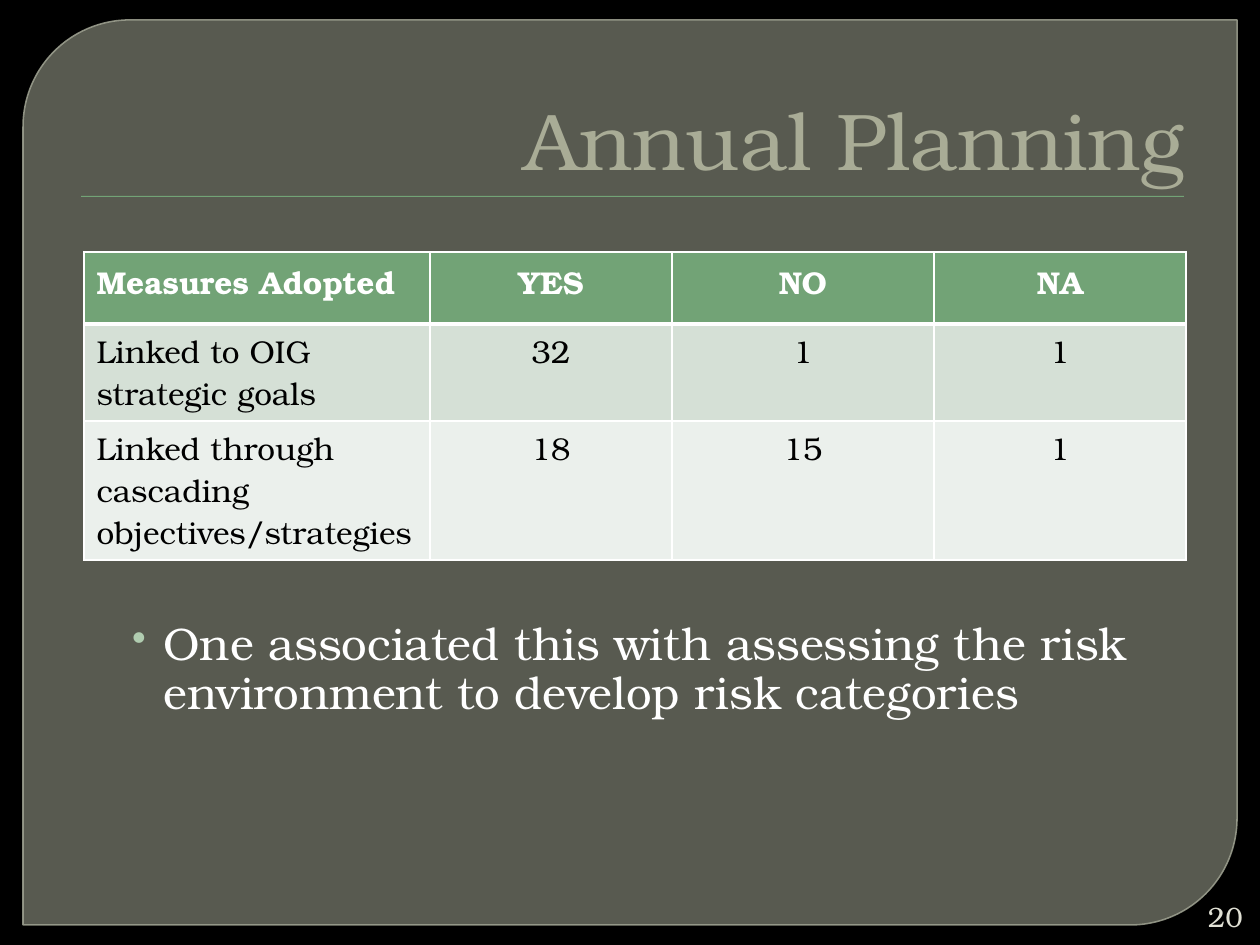
from lxml import etree
from pptx import Presentation
from pptx import util as u
from pptx.dml.color import RGBColor
from pptx.enum import shapes, text
from pptx.oxml.ns import qn

PX = 914400 / 126
FONT = "TeX Gyre Bonum"
LEFT, CENTER, RIGHT = text.PP_ALIGN.LEFT, text.PP_ALIGN.CENTER, text.PP_ALIGN.RIGHT


def rgb(value):
    return RGBColor.from_string(value)


def write(tf, words, size, color, align=LEFT, bold=False):
    p = tf.paragraphs[0]
    p.alignment = align
    r = p.add_run()
    r.text = words
    r.font.color.rgb = rgb(color)
    for key, value in dict(name=FONT, size=u.Pt(size), bold=bold).items():
        setattr(r.font, key, value)
    return p


prs = Presentation()
prs.slide_width, prs.slide_height = u.Inches(10), u.Inches(7.5)
s = prs.slides.add_slide(prs.slide_layouts[5])
s.background.fill.solid()
s.background.fill.fore_color.rgb = rgb("000000")

# Panel with two rounded corners, and the rule below the title
kinds = shapes.MSO_SHAPE
for kind, box, fill, alpha in [
    (kinds.ROUND_2_DIAG_RECTANGLE, (23, 20, 1214, 905), "888B7B", 65),
    (kinds.RECTANGLE, (81, 196, 1103, 1), "72A376", 100),
]:
    sp = s.shapes.add_shape(kind, *[round(v * PX) for v in box])
    sp.shadow.inherit = False
    sp.fill.solid()
    sp.fill.fore_color.rgb = rgb(fill)
    sp.line.fill.background()
    if kind == kinds.ROUND_2_DIAG_RECTANGLE:
        sp.adjustments[0], sp.adjustments[1] = 0.118, 0
        sp.line.color.rgb = rgb("9DA090")
        sp.line.width = u.Pt(0.87)
        for part, opacity in [(sp.fill, alpha), (sp.line.fill, 88)]:
            clr = part._xPr.find(".//" + qn("a:srgbClr"))
            etree.SubElement(clr, qn("a:alpha"), val=str(opacity * 1000))

# Title
title = s.shapes.title
frame = dict(left=63, top=35, width=1134, height=158)
for key, value in frame.items():
    setattr(title, key, round(value * PX))
title.text_frame.vertical_anchor = text.MSO_ANCHOR.BOTTOM
write(title.text_frame, "Annual Planning", 46, "E7EACB", RIGHT)

# Table of measures
rows = [
    ("Measures Adopted", "YES", "NO", "NA"),
    ("Linked to OIG strategic goals", "32", "1", "1"),
    ("Linked through cascading objectives/strategies", "18", "15", "1"),
]
widths, heights = [346, 242, 262, 252], [72, 97, 139]
fills = ["72A376", "D5E0D6", "EBF0EC"]
table = s.shapes.add_table(
    3, 4, *[round(v * PX) for v in (84, 252, sum(widths), sum(heights))]).table
for col, width in zip(table.columns, widths):
    col.width = round(width * PX)
for i, row in enumerate(rows):
    table.rows[i].height = round(heights[i] * PX)
    for j, words in enumerate(row):
        cell = table.cell(i, j)
        write(cell.text_frame, words, 18, "000000" if i else "FFFFFF",
              CENTER if j else LEFT, bold=i == 0)
        # Borders go before the fill; a thick one divides header and body
        tc_pr = cell._tc.get_or_add_tcPr()
        thick = {(0, "B"), (1, "T")}
        for side in "LRTB":
            width = u.Pt(3 if (i, side) in thick else 1)
            ln = etree.SubElement(tc_pr, qn("a:ln" + side), w=str(width))
            solid = etree.SubElement(ln, qn("a:solidFill"))
            etree.SubElement(solid, qn("a:srgbClr"), val="FFFFFF")
        cell.fill.solid()
        cell.fill.fore_color.rgb = rgb(fills[i])

# Bulleted remark
tf = s.shapes.add_textbox(*[round(v * PX) for v in (63, 615, 1134, 235)]).text_frame
tf.word_wrap = True
p = write(tf, "One associated this with assessing the risk environment to develop risk categories",
          26, "FFFFFF")
p.line_spacing = 0.9
p_pr = p._p.get_or_add_pPr()
p_pr.set("marL", str(u.Inches(0.7)))
p_pr.set("indent", str(u.Inches(-0.25)))
bullet = etree.SubElement(p_pr, qn("a:buClr"))
etree.SubElement(bullet, qn("a:srgbClr"), val="B0CCB0")
etree.SubElement(p_pr, qn("a:buSzPct"), val="90000")
etree.SubElement(p_pr, qn("a:buChar"), char="•")

# Slide number
tf = s.shapes.add_textbox(*[round(v * PX) for v in (1191, 897, 64, 38)]).text_frame
tf.word_wrap = True
tf.vertical_anchor = text.MSO_ANCHOR.MIDDLE
write(tf, "20", 16, "E0E0D4", RIGHT)

prs.save("out.pptx")
